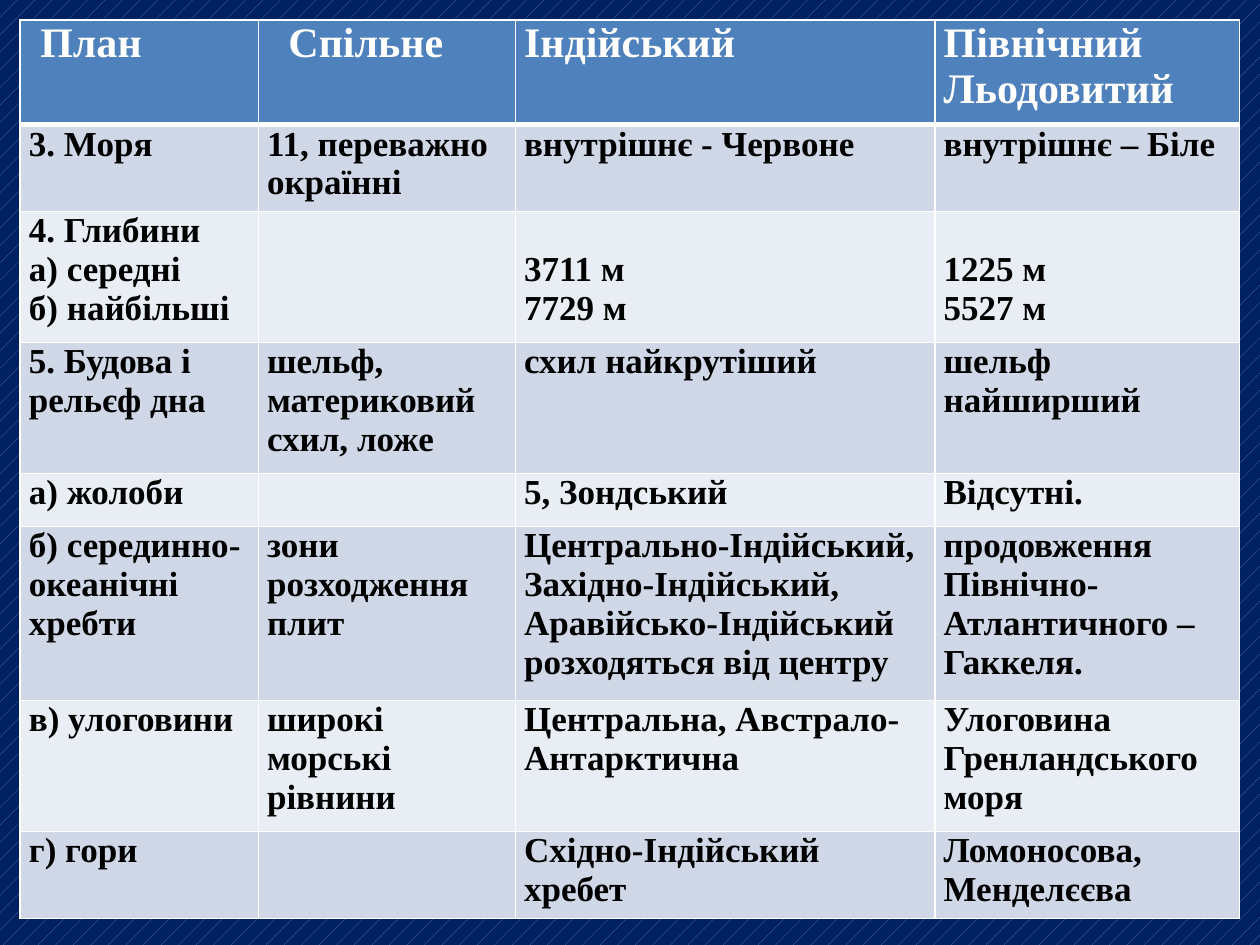
from lxml.etree import SubElement
from pptx import Presentation
from pptx.dml.color import RGBColor
from pptx.enum.dml import MSO_PATTERN
from pptx.oxml.ns import qn
from pptx.util import Inches, Pt

NAVY = RGBColor(0x00, 0x20, 0x60)
BLUE = RGBColor(0x4F, 0x81, 0xBD)
DARK_BAND = RGBColor(0xD0, 0xD8, 0xE8)
LIGHT_BAND = RGBColor(0xE9, 0xED, 0xF4)
WHITE = RGBColor(0xFF, 0xFF, 0xFF)
BLACK = RGBColor(0x00, 0x00, 0x00)

COLUMN_WIDTHS = [1.89, 2.04, 3.33, 2.42]
ROW_HEIGHTS = [0.83, 0.69, 1.04, 1.04, 0.42, 1.38, 1.04, 0.69]
OCEAN_ROWS = [
    ["План", "Спільне", "Індійський", "Північний Льодовитий"],
    ["3. Моря", "11, переважно окраїнні", "внутрішнє - Червоне", "внутрішнє – Біле"],
    ["4. Глибини\nа) середні\nб) найбільші", "", "3711 м\n7729 м", "1225 м\n5527 м"],
    ["5. Будова і\nрельєф дна", "шельф, материковий схил, ложе", "схил найкрутіший",
     "шельф найширший"],
    ["а) жолоби", "", "5, Зондський", "Відсутні."],
    ["б) серединно-океанічні\nхребти", "зони розходження плит",
     "Центрально-Індійський, Західно-Індійський, Аравійсько-Індійський розходяться від центру",
     "продовження Північно-Атлантичного – Гаккеля."],
    ["в) улоговини", "широкі морські рівнини", "Центральна, Австрало-Антарктична",
     "Улоговина Гренландського моря"],
    ["г) гори", "", "Східно-Індійський хребет", "Ломоносова, Менделєєва"],
]
HEADER_INDENTS = {(0, 0): 0.16, (0, 1): 0.24}
DEPTH_OFFSETS = {(2, 2): 0.31, (2, 3): 0.31}


class SlideBuilder:
    """Holds the table style and the current slide."""

    font_name = "Times New Roman"
    header_size = Pt(24)
    body_size = Pt(20)
    side_margin = 0.07

    def __init__(self, slide):
        self.slide = slide

    def set_background(self):
        fill = self.slide.background.fill
        fill.patterned()
        fill.pattern = MSO_PATTERN.PERCENT_5
        fill.fore_color.rgb = BLUE
        fill.back_color.rgb = NAVY

    def add_border(self, cell, side, width):
        line = SubElement(cell._tc.get_or_add_tcPr(), qn(f"a:ln{side}"), w=str(Pt(width)))
        solid_fill = SubElement(line, qn("a:solidFill"))
        SubElement(solid_fill, qn("a:srgbClr"), val=str(WHITE))

    def format_cell(self, cell, text, row, column):
        is_header = row == 0
        for side in "LRTB":
            is_thick = (row, side) in ((0, "B"), (1, "T"))
            self.add_border(cell, side, 3 if is_thick else 1)
        cell.fill.solid()
        band = DARK_BAND if row % 2 else LIGHT_BAND
        cell.fill.fore_color.rgb = BLUE if is_header else band
        cell.margin_left = Inches(HEADER_INDENTS.get((row, column), self.side_margin))
        cell.margin_right = Inches(self.side_margin)
        cell.margin_top = Inches(DEPTH_OFFSETS.get((row, column), 0))
        cell.margin_bottom = 0
        cell.text = text
        for paragraph in cell.text_frame.paragraphs:
            font = paragraph.font
            font.name = self.font_name
            font.size = self.header_size if is_header else self.body_size
            font.bold = True
            font.color.rgb = WHITE if is_header else BLACK

    def add_table(self, left, top, column_widths, row_heights, rows):
        table = self.slide.shapes.add_table(
            len(rows), len(column_widths), Inches(left), Inches(top),
            Inches(sum(column_widths)), Inches(sum(row_heights))).table
        for column, width in zip(table.columns, column_widths):
            column.width = Inches(width)
        for row, height in zip(table.rows, row_heights):
            row.height = Inches(height)
        for row_index, texts in enumerate(rows):
            for column_index, text in enumerate(texts):
                cell = table.cell(row_index, column_index)
                self.format_cell(cell, text, row_index, column_index)


def main():
    presentation = Presentation()
    presentation.slide_width = Inches(10)
    presentation.slide_height = Inches(7.5)
    builder = SlideBuilder(presentation.slides.add_slide(presentation.slide_layouts[6]))
    builder.set_background()
    builder.add_table(0.16, 0.16, COLUMN_WIDTHS, ROW_HEIGHTS, OCEAN_ROWS)
    presentation.save("out.pptx")


if __name__ == "__main__":
    main()
